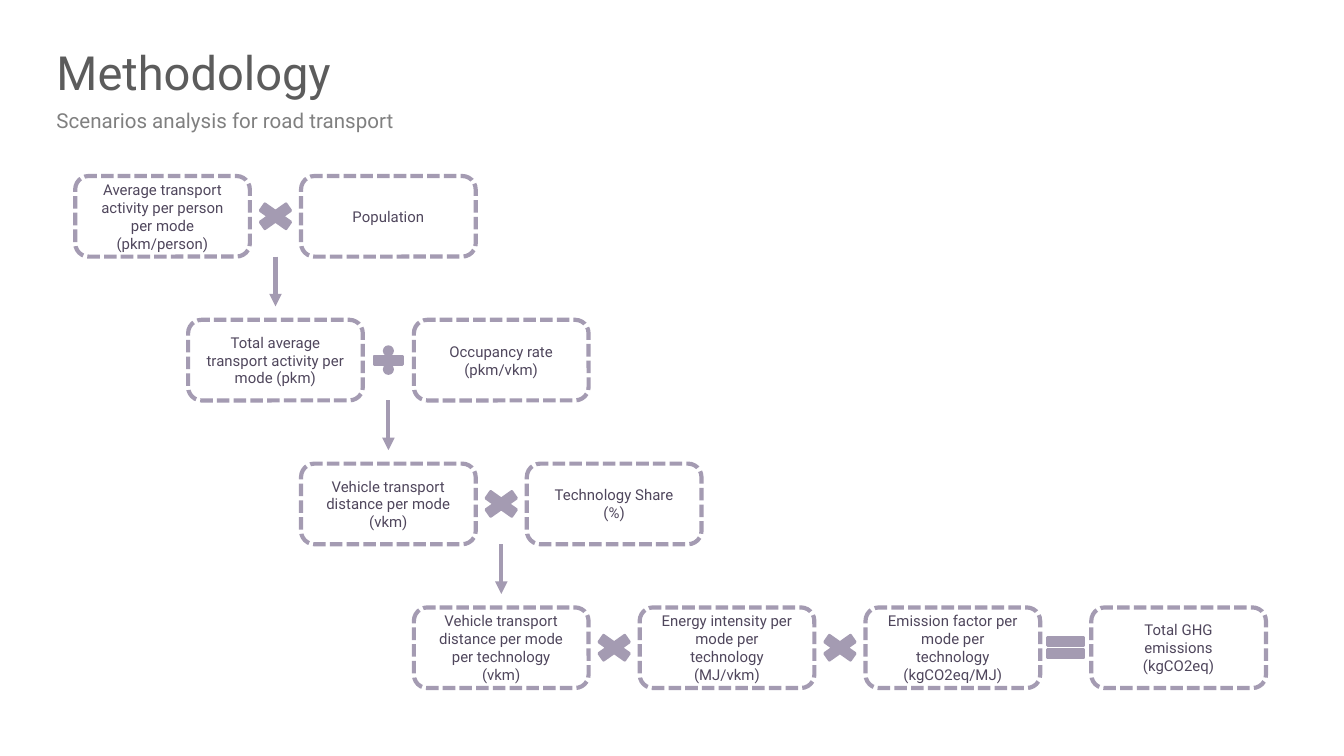
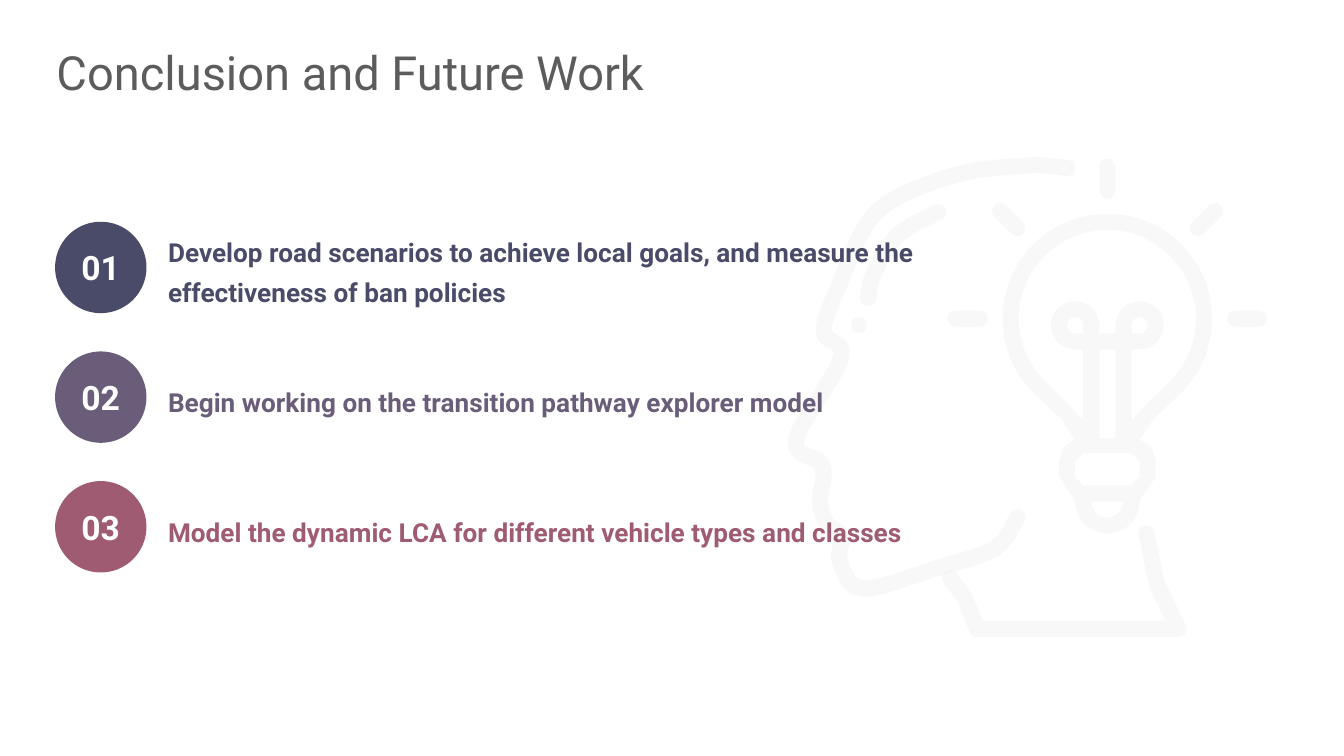
from dataclasses import dataclass
from math import cos, radians, sin

from lxml import etree
from pptx import Presentation
from pptx.dml.color import RGBColor
from pptx.enum.dml import MSO_LINE
from pptx.enum.shapes import MSO_CONNECTOR, MSO_SHAPE
from pptx.enum.text import MSO_ANCHOR, MSO_AUTO_SIZE, PP_ALIGN
from pptx.oxml.ns import qn
from pptx.util import Inches, Pt

ROUNDED, OVAL = MSO_SHAPE.ROUNDED_RECTANGLE, MSO_SHAPE.OVAL
TIMES, DIVIDE, EQUAL = MSO_SHAPE.MATH_MULTIPLY, MSO_SHAPE.MATH_DIVIDE, MSO_SHAPE.MATH_EQUAL
LEFT, CENTER = PP_ALIGN.LEFT, PP_ALIGN.CENTER
MIDDLE = MSO_ANCHOR.MIDDLE


@dataclass(frozen=True)
class Theme:
    font: str = "Roboto"
    title: str = "5C5C5C"
    subtitle: str = "808080"
    box_text: str = "4F465C"
    accent: str = "A49BB2"
    white: str = "FFFFFF"
    icon: str = "F2F2F2"
    title_size: float = 25.2
    subtitle_size: float = 11
    box_size: float = 8
    item_size: float = 14
    number_size: float = 18


THEME = Theme()

# Content: each row of the calculation starts one column further right
METHOD_TITLE = "Methodology"
METHOD_SUBTITLE = "Scenarios analysis for road transport"
METHOD_ROWS = [
    ["Average transport activity per person per mode (pkm/person)", TIMES, "Population"],
    ["Total average transport activity per mode (pkm)", DIVIDE, "Occupancy rate (pkm/vkm)"],
    ["Vehicle transport distance per mode (vkm)", TIMES, "Technology Share (%)"],
    ["Vehicle transport distance per mode per technology (vkm)", TIMES,
     "Energy intensity per mode per technology (MJ/vkm)", TIMES,
     "Emission factor per mode per technology (kgCO2eq/MJ)", EQUAL,
     "Total GHG emissions (kgCO2eq)"],
]
CONCLUSION_TITLE = "Conclusion and Future Work"
CONCLUSIONS = [  # text, colour, lines it takes
    ("Develop road scenarios to achieve local goals, and measure the effectiveness of ban policies",
     "494B69", 2),
    ("Begin working on the transition pathway explorer model", "695D7A", 1),
    ("Model the dynamic LCA for different vehicle types and classes", "9F5B72", 1),
]

# Layout, in inches
MARGIN, TEXT_WIDTH = 0.42, 9.15
GRID_LEFT, GRID_TOP, COLUMN, ROW = 0.56, 1.31, 0.84, 1.07
BOX_W, BOX_H = 1.3, 0.6
SIGN_W, SIGN_H, ARROW = 0.37, 0.26, 0.37
DIVIDE_W = 0.29
CIRCLE, ITEM_TOP, ITEM_PITCH, LINE_HEIGHT = 0.68, 1.65, 0.965, 0.29

# Head icon: strokes of one thickness around a symmetric bulb
STROKE = 0.12
PROFILE = [
    (7.94, 1.25), (7.65, 1.23), (7.08, 1.31), (6.52, 1.58), (6.24, 2.13), (6.13, 2.47),
    (6.26, 2.66), (5.92, 3.28), (6.12, 3.46), (6.1, 3.73), (6.15, 3.89), (6.26, 3.99),
    (6.25, 4.18), (6.42, 4.38), (6.96, 4.23), (7.4, 4.08), (7.57, 3.85),
]
SHINE = [(6.98, 1.58), (6.68, 1.75), (6.5, 2.04), (6.46, 2.22)]
NECK = [(7.07, 4.3), (7.18, 4.45), (7.27, 4.68), (8.77, 4.68), (8.61, 4.35), (8.53, 3.97)]
DOT = (6.33, 2.36, STROKE, STROKE)
AXIS, BULB_Y, GLASS_RADIUS, LOOP_RADIUS = 8.24, 2.37, 0.72, 0.12
LOOP_X, LOOP_Y, TIP_Y = 8.48, 2.42, 3.73
RAY_RADIUS, RAY_LENGTH = 1.04, 0.3


# Shared helpers
def color(value):
    return RGBColor.from_string(value)


def write(shape, text, size, ink, align=LEFT, bold=False, inset=0):
    frame = shape.text_frame
    frame.text = text
    frame.word_wrap = True
    frame.auto_size = MSO_AUTO_SIZE.NONE
    frame.vertical_anchor = MIDDLE
    frame.margin_left = frame.margin_right = Inches(inset)
    frame.margin_top = frame.margin_bottom = Inches(inset / 2)
    paragraph = frame.paragraphs[0]
    paragraph.alignment = align
    font = paragraph.font
    font.name, font.size, font.bold = THEME.font, Pt(size), bold
    font.color.rgb = color(ink)
    return paragraph


def add_text(slide, box, *args, **style):
    area = slide.shapes.add_textbox(*map(Inches, box))
    return area, write(area, *args, **style)


def paint(shape, fill, line=None, width=0):
    shape.shadow.inherit = False
    shape.fill.solid()
    shape.fill.fore_color.rgb = color(fill)
    if line:
        shape.line.color.rgb = color(line)
        shape.line.width = Pt(width)
    else:
        shape.line.fill.background()
    return shape


def add_preset(slide, kind, box, *style):
    return paint(slide.shapes.add_shape(kind, *map(Inches, box)), *style)


def add_titled_slide(deck, title):
    slide = deck.slides.add_slide(deck.slide_layouts[5])
    heading = slide.shapes.title
    heading.left, heading.top = Inches(MARGIN), Inches(0.31)
    heading.width, heading.height = Inches(TEXT_WIDTH), Inches(0.45)
    write(heading, title, THEME.title_size, THEME.title)
    return slide


# Methodology parts
def add_arrow(slide, x, top):
    arrow = slide.shapes.add_connector(
        MSO_CONNECTOR.STRAIGHT, *map(Inches, (x, top, x, top + ARROW)))
    arrow.line.color.rgb = color(THEME.accent)
    arrow.line.width = Pt(2.25)
    etree.SubElement(arrow.line._get_or_add_ln(), qn("a:tailEnd"), type="triangle")
    etree.SubElement(arrow._element.spPr, qn("a:effectLst"))


def build_methodology(deck):
    slide = add_titled_slide(deck, METHOD_TITLE)
    add_text(slide, (MARGIN, 0.8, TEXT_WIDTH, 0.19), METHOD_SUBTITLE,
             THEME.subtitle_size, THEME.subtitle)
    sign_offset = (BOX_W + 2 * COLUMN) / 2
    for row, parts in enumerate(METHOD_ROWS):
        left, top = GRID_LEFT + row * COLUMN, GRID_TOP + row * ROW
        for i, label in enumerate(parts[::2]):
            box = add_preset(slide, ROUNDED, (left + 2 * i * COLUMN, top, BOX_W, BOX_H),
                             THEME.white, THEME.accent, 2.25)
            box.line.dash_style = MSO_LINE.SQUARE_DOT
            write(box, label, THEME.box_size, THEME.box_text, CENTER, inset=0.1)
        for i, sign in enumerate(parts[1::2]):
            center = left + 2 * i * COLUMN + sign_offset
            width = DIVIDE_W if sign == DIVIDE else SIGN_W
            add_preset(slide, sign,
                       (center - width / 2, top + (BOX_H - SIGN_H) / 2, width, SIGN_H),
                       THEME.accent, THEME.accent, 1.5)
        if row < len(METHOD_ROWS) - 1:
            add_arrow(slide, left + sign_offset, top + BOX_H)


# Icon parts
def arc(x, y, radius, start, end, steps=24):
    angles = [radians(start + (end - start) * i / steps) for i in range(steps + 1)]
    return [(x + radius * cos(a), y + radius * sin(a)) for a in angles]


def mirror(points):
    return [(2 * AXIS - x, y) for x, y in reversed(points)]


def smooth(points, steps=6):
    """Catmull-Rom curve through the points."""
    ends = [points[0], *points, points[-1]]
    curve = [points[0]]
    for a, b, c, d in zip(ends, ends[1:], ends[2:], ends[3:]):
        for step in range(1, steps + 1):
            t = step / steps
            curve.append(tuple(
                q + t / 2 * (r - p + t * (2 * p - 5 * q + 4 * r - s
                                          + t * (3 * (q - r) + s - p)))
                for p, q, r, s in zip(a, b, c, d)))
    return curve


def bulb_outlines():
    half = STROKE / 2
    glass = (arc(AXIS, BULB_Y, GLASS_RADIUS + half, -90, 45)
             + [(8.58, 3.12), (8.48, 3.27), (8.57, 3.33), (8.6, 3.43), (8.6, 3.55), (8.48, 3.72)]
             + arc(AXIS, TIP_Y, 2 * STROKE, 0, 90))
    inside = (arc(AXIS, BULB_Y, GLASS_RADIUS - half, -90, 45)
              + [(8.54, 3), (8.42, 3.13), (8.42, 2.6)]
              + arc(LOOP_X, LOOP_Y, LOOP_RADIUS + half, 90, -180) + [(8.3, 2.48)])
    stem = [(8.3, 2.6), (8.3, 3.26)]
    base = [(8.42, 3.37), (8.48, 3.43), (8.48, 3.55), (8.42, 3.61)]
    tip = arc(AXIS, TIP_Y, STROKE, 0, 90)
    loop = [(8.42, 2.48)] + arc(LOOP_X, LOOP_Y, LOOP_RADIUS - half, -180, 90)
    sides = [glass, inside, stem, base, tip]
    return [side + mirror(side) for side in sides] + [loop, mirror(loop)]


def add_alpha(parent):
    tint = parent.find(qn("a:solidFill")).find(qn("a:srgbClr"))
    etree.SubElement(tint, qn("a:alpha"), val="50000")


def fade(shape):
    paint(shape, THEME.icon)
    add_alpha(shape._element.spPr)


def add_outline(slide, contours, close=True):
    contours = [[(Inches(x), Inches(y)) for x, y in points] for points in contours]
    builder = slide.shapes.build_freeform(*contours[0][0], scale=1.0)
    for i, points in enumerate(contours):
        if i:
            builder.move_to(*points[0])
        builder.add_line_segments(points[1:], close=close)
    return builder.convert_to_shape()


def add_stroke(slide, points):
    stroke = add_outline(slide, [points], close=False)
    stroke.shadow.inherit = False
    stroke.fill.background()
    stroke.line.color.rgb = color(THEME.icon)
    stroke.line.width = Inches(STROKE)
    line = stroke.line._get_or_add_ln()
    line.set("cap", "rnd")
    add_alpha(line)
    etree.SubElement(line, qn("a:round"))


def add_icon(slide):
    for points in (smooth(PROFILE), smooth(SHINE), NECK):
        add_stroke(slide, points)
    fade(add_outline(slide, bulb_outlines()))
    fade(add_preset(slide, OVAL, DOT, THEME.icon))
    for angle in range(-180, 1, 45):
        x = AXIS + RAY_RADIUS * cos(radians(angle))
        y = BULB_Y + RAY_RADIUS * sin(radians(angle))
        ray = add_preset(slide, ROUNDED, (x - RAY_LENGTH / 2, y - STROKE / 2,
                                          RAY_LENGTH, STROKE), THEME.icon)
        ray.adjustments[0] = 0.5
        ray.rotation = angle % 180
        fade(ray)


def build_conclusion(deck):
    slide = add_titled_slide(deck, CONCLUSION_TITLE)
    add_icon(slide)
    for i, (text, ink, lines) in enumerate(CONCLUSIONS):
        top, height = ITEM_TOP + i * ITEM_PITCH, lines * LINE_HEIGHT
        area, paragraph = add_text(slide, (1.25, top + (CIRCLE - height) / 2, 5.59, height),
                                   text, THEME.item_size, ink, bold=True)
        area.text_frame.auto_size = MSO_AUTO_SIZE.SHAPE_TO_FIT_TEXT
        paragraph.line_spacing = 1.3
        paragraph.space_after = Pt(10)
        circle = add_preset(slide, OVAL, (0.41, top, CIRCLE, CIRCLE), ink)
        write(circle, f"{i + 1:02}", THEME.number_size, THEME.white, CENTER, bold=True)


def main():
    deck = Presentation()
    deck.slide_width = Inches(10)
    deck.slide_height = deck.slide_width * 9 // 16
    build_methodology(deck)
    build_conclusion(deck)
    deck.save("out.pptx")


if __name__ == "__main__":
    main()
